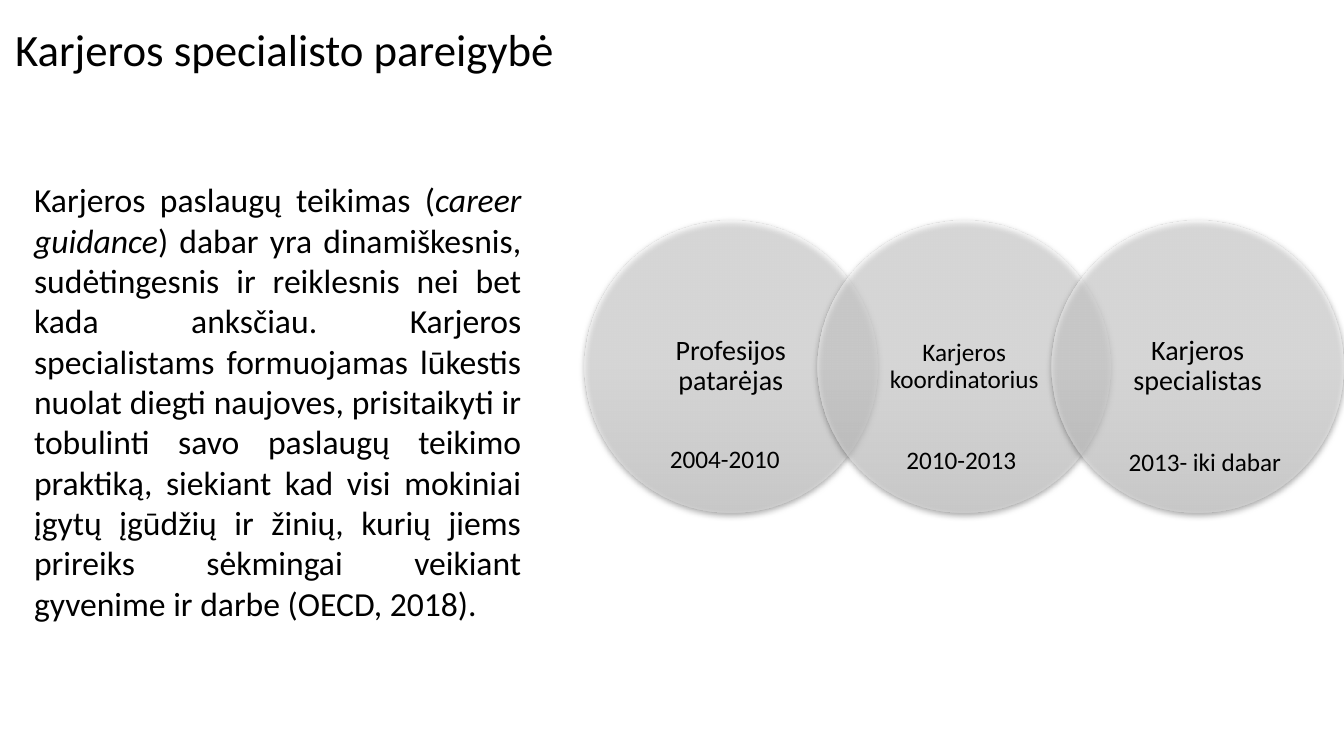
from lxml import etree
from pptx import Presentation
from pptx import util as u
from pptx.dml.color import RGBColor
from pptx.enum import shapes, text
from pptx.oxml import ns

WIDE, HIGH = u.Inches(13.33), u.Inches(7.5)
THEME = {
    "font": "Calibri", "ink": "000000", "light": "FFFFFF", "shade": "E3E3E3",
    "title": 32, "body": 24, "large": 20, "small": 18,
}
LEFT, TOP, STEP = 43.5, 29.15, 17.37
DISC = (21.75, 38.67)
LABEL = (15.38, 27.33)
STAGES = [
    ("Profesijos patarėjas", "large", "2004-2010", (44.1, 58.4, 19.65, 5.5), 0.9),
    ("Karjeros koordinatorius", "small", "2010-2013", (62.6, 58.53, 17.85, 6.9), 0.9),
    ("Karjeros specialistas", "large", "2013- iki dabar", (80.4, 58.4, 18.5, 6.9), 1.0),
]
INTRO = [
    ("Karjeros paslaugų teikimas (", False),
    ("career guidance", True),
    (") dabar yra dinamiškesnis, sudėtingesnis ir reiklesnis nei bet kada "
     "anksčiau. Karjeros specialistams formuojamas lūkestis nuolat diegti "
     "naujoves, prisitaikyti ir tobulinti savo paslaugų teikimo praktiką, "
     "siekiant kad visi mokiniai įgytų įgūdžių ir žinių, kurių jiems prireiks "
     "sėkmingai veikiant gyvenime ir darbe (OECD, 2018).", False),
]


def place(box):
    x, y, w, h = box
    return [int(n) for n in (WIDE * x / 100, HIGH * y / 100,
                             WIDE * w / 100, HIGH * h / 100)]


def apply(item, style):
    for key, value in style.items():
        setattr(item, key, value)


def write(slide, box, runs, size, para=None, frame=None):
    body = slide.shapes.add_textbox(*place(box)).text_frame
    apply(body, {"word_wrap": True, **(frame or {})})
    line = body.paragraphs[0]
    apply(line, para or {})
    for words, slant in runs:
        run = line.add_run()
        run.text = words
        apply(run.font, {"name": THEME["font"], "size": u.Pt(THEME[size]),
                         "italic": slant})
        run.font.color.rgb = RGBColor.from_string(THEME["ink"])


def node(root, tag, **attrs):
    item = etree.SubElement(root, ns.qn("a:" + tag))
    for key, value in attrs.items():
        item.set(key, str(value))
    return item


def tint(root, color, alpha):
    node(node(root, "srgbClr", val=THEME[color]), "alpha", val=alpha * 1000)


def disc(slide, box):
    form = slide.shapes.add_shape(shapes.MSO_SHAPE.OVAL, *place(box))
    form.line.fill.background()
    form.fill.gradient()
    form.fill.gradient_angle = 270
    stops = form.fill._fill._gradFill.find(ns.qn("a:gsLst"))
    for stop in list(stops):
        stops.remove(stop)
    for spot, color in ((0, "light"), (50, "light"), (100, "shade")):
        tint(node(stops, "gs", pos=spot * 1000), color, 50)
    cast = node(node(form._element.spPr, "effectLst"), "outerShdw",
                blurRad=u.Pt(4.5), dist=u.Pt(1.5), dir=5400000, rotWithShape=0)
    tint(cast, "ink", 63)


def stage(slide, index, name, size):
    x = LEFT + index * STEP
    disc(slide, (x, TOP, *DISC))
    inset = [(d - n) / 2 for d, n in zip(DISC, LABEL)]
    side, edge = u.Inches(0.16), u.Inches(0.03)
    write(slide, (x + inset[0], TOP + inset[1], *LABEL), [(name, False)], size,
          {"alignment": text.PP_ALIGN.CENTER, "line_spacing": 0.9},
          {"vertical_anchor": text.MSO_ANCHOR.MIDDLE,
           "margin_left": side, "margin_right": side,
           "margin_top": edge, "margin_bottom": edge})


def main():
    deck = Presentation()
    apply(deck, {"slide_width": WIDE, "slide_height": HIGH})
    slide = deck.slides.add_slide(deck.slide_layouts[6])
    write(slide, (1.8, 23.07, 37.73, 18.4), INTRO, "body",
          {"alignment": text.PP_ALIGN.JUSTIFY})
    write(slide, (0.38, 2.27, 42.76, 15.33),
          [("Karjeros specialisto pareigybė", False)], "title")
    for index, (name, size, *_) in enumerate(STAGES):
        stage(slide, index, name, size)
    for _, _, years, box, space in STAGES:
        write(slide, box, [(years, False)], "small",
              {"alignment": text.PP_ALIGN.CENTER, "line_spacing": space})
    deck.save("out.pptx")


if __name__ == "__main__":
    main()
